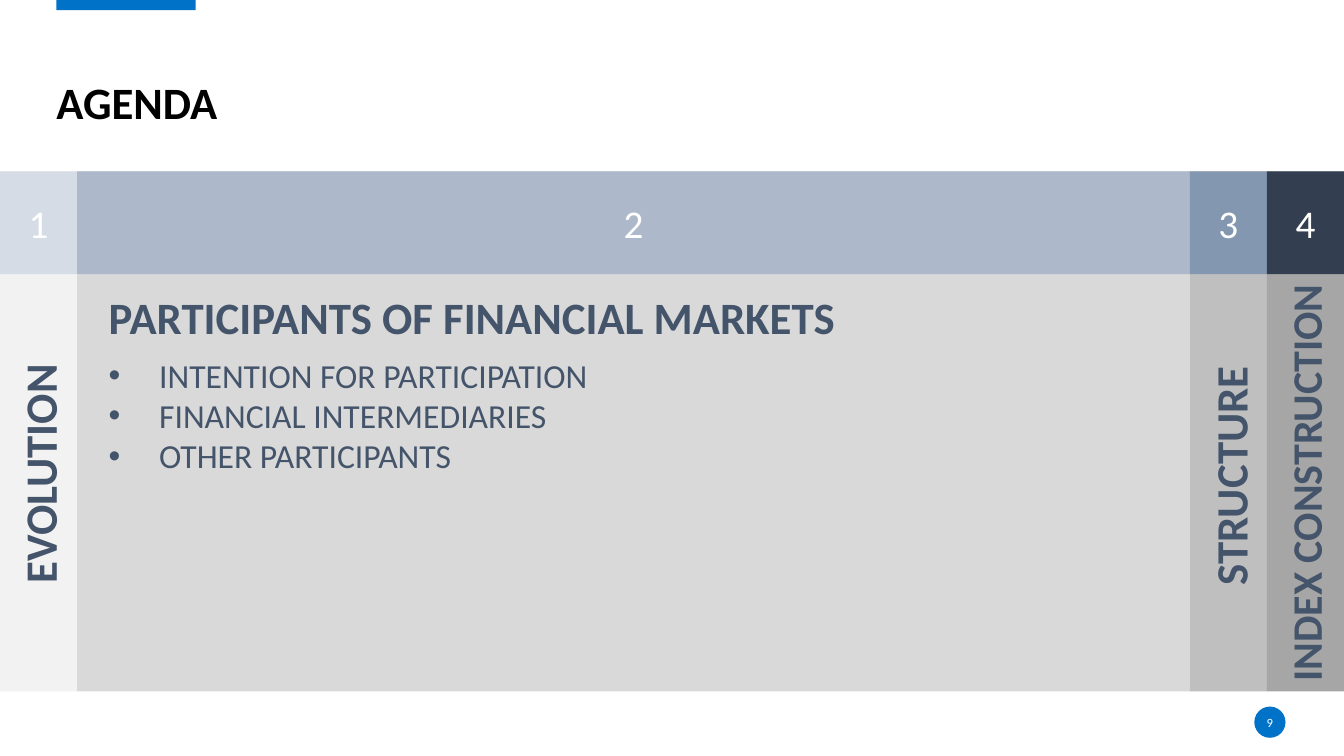
"""Build the agenda slide with four numbered panels."""
import pptx
import pptx.util
import pptx.dml.color
import pptx.enum.shapes
import pptx.enum.text
import lxml.etree
from pptx.oxml.ns import qn

Inches = pptx.util.Inches
Color = pptx.dml.color.RGBColor
Shape = pptx.enum.shapes.MSO_SHAPE
Anchor = pptx.enum.text.MSO_ANCHOR
Align = pptx.enum.text.PP_ALIGN

WIDE, HIGH = 13.33, 7.5
TAB = 0.765
TOP, BODY, HEAD = 1.7, 5.16, 1.02
INSET = 0.1

BLUE = Color(0x00, 0x72, 0xC7)
SLATE = Color(0x44, 0x54, 0x6A)
BLACK = Color(0, 0, 0)
WHITE = Color(255, 255, 255)

PANELS = [
    (0, TAB, Color(0xF2, 0xF2, 0xF2), Color(0xD6, 0xDC, 0xE5)),
    (TAB, WIDE - 3 * TAB, Color(0xD9, 0xD9, 0xD9), Color(0xAD, 0xB9, 0xCA)),
    (WIDE - 2 * TAB, TAB, Color(0xBF, 0xBF, 0xBF), Color(0x84, 0x97, 0xB0)),
    (WIDE - TAB, TAB, Color(0xA6, 0xA6, 0xA6), Color(0x33, 0x3F, 0x50)),
]
LABELS = [
    ("EVOLUTION", 0.39, 4.64, 2.49, 0.64, 32),
    ("STRUCTURE", 12.2, 4.41, 2.99, 0.64, 32),
    ("INDEX CONSTRUCTION", 12.95, 4.28, BODY, 0.61, 30),
]
POINTS = ["INTENTION FOR PARTICIPATION", "FINANCIAL INTERMEDIARIES",
          "OTHER PARTICIPANTS"]


def write(shape, lines, size, color, bold=False, align=Align.LEFT,
          anchor=Anchor.TOP, inset=INSET):
    """Fill a shape with lines of text in one style."""
    frame = shape.text_frame
    frame.word_wrap = True
    frame.vertical_anchor = anchor
    frame.margin_left = frame.margin_right = Inches(inset)
    frame.margin_top = frame.margin_bottom = Inches(inset / 2)
    frame.text = "\n".join(lines)
    for para in frame.paragraphs:
        para.alignment = align
        font = para.font
        font.name, font.size, font.bold = "Calibri", pptx.util.Pt(size), bold
        font.color.rgb = color
    return frame


def block(slide, kind, box, fill):
    """Add a plain filled shape."""
    shape = slide.shapes.add_shape(kind, *map(Inches, box))
    shape.shadow.inherit = False
    shape.fill.solid()
    shape.fill.fore_color.rgb = fill
    shape.line.fill.background()
    return shape


def label(slide, box, lines, size, color, **style):
    """Add a text box."""
    shape = slide.shapes.add_textbox(*map(Inches, box))
    write(shape, lines, size, color, **style)
    return shape


def panel(slide, num, left, wide, fill, band):
    """Add a panel with its numbered band."""
    block(slide, Shape.RECTANGLE, (left, TOP, wide, BODY), fill)
    head = block(slide, Shape.RECTANGLE, (left, TOP, wide, HEAD), band)
    write(head, [str(num)], 28, WHITE, align=Align.CENTER,
          anchor=Anchor.MIDDLE)


def upright(slide, text, mid_x, mid_y, wide, high, size):
    """Add a label that reads upward, centred on a point."""
    box = (mid_x - wide / 2, mid_y - high / 2, wide, high)
    label(slide, box, [text], size, SLATE, bold=True).rotation = 270


def bullet(para):
    """Give a paragraph a hanging bullet."""
    props = para._p.get_or_add_pPr()
    props.set("marL", str(Inches(0.5)))
    props.set("indent", str(-Inches(0.5)))
    font = lxml.etree.Element(qn("a:buFont"), typeface="Arial")
    mark = lxml.etree.Element(qn("a:buChar"), char="•")
    props.insert(0, font)
    props.insert(1, mark)


def main():
    """Build and save the slide."""
    deck = pptx.Presentation()
    deck.slide_width, deck.slide_height = Inches(WIDE), Inches(HIGH)
    slide = deck.slides.add_slide(deck.slide_layouts[6])

    block(slide, Shape.RECTANGLE, (0.56, -0.02, 1.38, 0.12), BLUE)
    title = label(slide, (0.56, 0.27, 12.19, 1.01), ["AGENDA"], 32, BLACK,
                  bold=True, anchor=Anchor.BOTTOM, inset=0)
    title.text_frame.paragraphs[0].line_spacing = 0.9
    badge = block(slide, Shape.OVAL, (12.44, 7.01, 0.31, 0.31), BLUE)
    write(badge, ["9"], 9, WHITE, align=Align.CENTER, anchor=Anchor.MIDDLE,
          inset=0)

    for num, part in enumerate(PANELS, 1):
        panel(slide, num, *part)
    for part in LABELS:
        upright(slide, *part)

    label(slide, (0.98, 2.83, 7.78, 0.64),
          ["PARTICIPANTS OF FINANCIAL MARKETS"], 32, SLATE, bold=True)
    points = label(slide, (0.98, 3.47, 6.52, 1.72), POINTS, 24, SLATE)
    for para in points.text_frame.paragraphs:
        bullet(para)

    deck.save("out.pptx")


if __name__ == "__main__":
    main()
